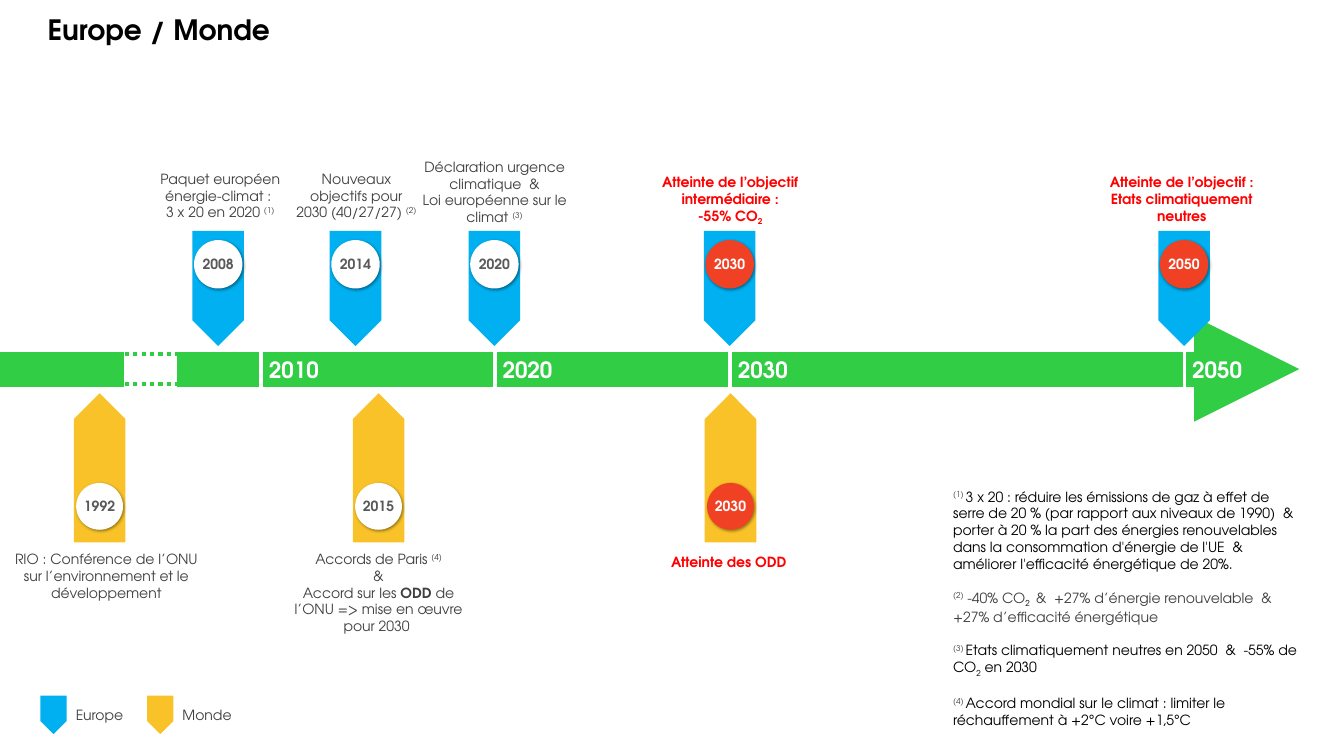
from dataclasses import dataclass
from typing import Any, Optional

from lxml import etree
from pptx import Presentation
from pptx import util as u
from pptx.dml.color import RGBColor
from pptx.enum import dml, shapes, text
from pptx.oxml import ns

FONT = "TeX Gyre Adventor"
COLOURS = {
    "black": "000000", "white": "FFFFFF", "green": "31CD44",
    "europe": "00B0F0", "monde": "F8C228", "target": "F14124",
    "alert": "FF0000", "year": "595959", "label": "404040",
}
LEFT, CENTER = text.PP_ALIGN.LEFT, text.PP_ALIGN.CENTER
SUPER, SUB = 30, -25
AXIS_Y = 9.3


@dataclass(frozen=True)
class Span:
    words: str
    base: int = 0
    bold: Optional[bool] = None
    colour: Optional[str] = None


Paragraphs = list[list[Span]]


@dataclass(frozen=True)
class Style:
    size: float = 10
    colour: str = "label"
    bold: bool = False
    align: Any = LEFT
    before: float = 0
    spacing: float = 1.0


@dataclass(frozen=True)
class Box:
    left: float
    top: float
    width: float
    height: float


@dataclass(frozen=True)
class Region:
    colour: str
    arrow_top: float
    arrow_height: float
    disc_top: float
    disc_size: float
    turn: int


@dataclass(frozen=True)
class Event:
    year: str
    region: Region
    centre: float
    label: Box
    paras: Paragraphs
    target: bool = False


@dataclass(frozen=True)
class Line:
    start: tuple[float, float]
    end: tuple[float, float]
    colour: str
    width: float
    ending: Optional[str] = None
    dash: Any = None


EUROPE = Region("europe", 5.82, 2.9, 6.05, 1.22, 0)
MONDE = Region("monde", 9.91, 3.76, 12.17, 1.18, 180)

EVENTS = [
    Event("2008", EUROPE, 5.5, Box(3.96, 4.29, 3.18, 1.27),
          [[Span("Paquet européen énergie-climat : ")],
           [Span("3 x 20 en 2020 "), Span("(1)", SUPER)]]),
    Event("2014", EUROPE, 8.96, Box(7.39, 4.29, 3.18, 1.27),
          [[Span("Nouveaux objectifs pour 2030 (40/27/27) "), Span("(2)", SUPER)]]),
    Event("2020", EUROPE, 12.46, Box(10.41, 3.99, 4.11, 1.7),
          [[Span("Déclaration urgence climatique  &")],
           [Span("Loi européenne sur le climat "), Span("(3)", SUPER)]]),
    Event("2030", EUROPE, 18.39, Box(16.56, 4.37, 3.68, 1.27),
          [[Span("Atteinte de l’objectif intermédiaire :")],
           [Span("-55% CO"), Span("2", SUB)]], True),
    Event("2050", EUROPE, 29.84, Box(27.94, 4.37, 3.68, 1.27),
          [[Span("Atteinte de l’objectif :")],
           [Span("Etats climatiquement neutres")]], True),
    Event("1992", MONDE, 2.51, Box(0.38, 13.87, 4.6, 1.27),
          [[Span("RIO : Conférence de l’ONU sur l’environnement et le développement")]]),
    Event("2015", MONDE, 9.54, Box(7.24, 13.87, 4.6, 2.13),
          [[Span("Accords de Paris "), Span("(4)", SUPER)],
           [Span("&")],
           [Span("Accord sur les "), Span("ODD", bold=True),
            Span(" de l’ONU => mise en œuvre pour 2030 ")]]),
    Event("2030", MONDE, 18.41, Box(16.56, 13.94, 3.61, 0.43),
          [[Span("Atteinte des ODD")]], True),
]

NOTES = [
    [Span("(1) ", SUPER, colour="label"),
     Span("3 x 20 : réduire les émissions de gaz à effet de serre de 20 % (par rapport aux "
          "niveaux de 1990)  & porter à 20 % la part des énergies renouvelables dans la "
          "consommation d'énergie de l'UE  &  améliorer l'efficacité énergétique de 20%.")],
    [Span("(2)", SUPER, colour="label"), Span(" -40% CO", colour="label"), Span("2 ", SUB),
     Span(" &  +27% d’énergie renouvelable  &  +27% d’efficacité énergétique", colour="label")],
    [Span("(3) ", SUPER, colour="label"),
     Span("Etats climatiquement neutres en 2050  &  -55% de CO"), Span("2", SUB),
     Span(" en 2030")],
    [Span("(4) ", SUPER, colour="label"),
     Span("Accord mondial sur le climat : limiter le réchauffement à +2°C voire +1,5°C")],
]

TICKS = {"2010": 6.58, "2020": 12.47, "2030": 18.4, "2050": 29.85}
AXIS = [
    Line((4.45, AXIS_Y), (32.74, AXIS_Y), "green", 25, "triangle"),
    Line((0, AXIS_Y), (3.12, AXIS_Y), "green", 25),
    *[Line((2.51, AXIS_Y + shift), (4.5, AXIS_Y + shift), "green", 3,
           dash=dml.MSO_LINE.ROUND_DOT) for shift in (-0.38, 0.38)],
    *[Line((x, AXIS_Y - 0.44), (x, AXIS_Y + 0.45), "white", 2.75) for x in TICKS.values()],
]


def rgb(name: str) -> RGBColor:
    return RGBColor.from_string(COLOURS[name])


def apply(thing: Any, formats: dict[str, Any]) -> None:
    for name, value in formats.items():
        setattr(thing, name, value)


def place(box: Box) -> list[u.Length]:
    return [u.Cm(side) for side in (box.left, box.top, box.width, box.height)]


def write(frame: Any, paras: Paragraphs, style: Style, inset: tuple[float, float] = (0, 0)) -> None:
    across, down = (u.Cm(side) for side in inset)
    apply(frame, {"word_wrap": True, "margin_left": across, "margin_right": across,
                  "margin_top": down, "margin_bottom": down})
    for index, spans in enumerate(paras):
        para = frame.add_paragraph() if index else frame.paragraphs[0]
        apply(para, {"alignment": style.align, "line_spacing": style.spacing,
                     "space_before": u.Pt(style.before if index else 0)})
        for item in spans:
            span = para.add_run()
            span.text = item.words
            bold = style.bold if item.bold is None else item.bold
            apply(span.font, {"name": FONT, "size": u.Pt(style.size), "bold": bold})
            span.font.color.rgb = rgb(item.colour or style.colour)
            if item.base:
                span._r.get_or_add_rPr().set("baseline", str(item.base * 1000))


def add_text(page: Any, box: Box, paras: Paragraphs, style: Style,
             inset: tuple[float, float] = (0, 0)) -> None:
    write(page.shapes.add_textbox(*place(box)).text_frame, paras, style, inset)


def add_filled(page: Any, kind: Any, box: Box, colour: str) -> Any:
    shape = page.shapes.add_shape(kind, *place(box))
    shape.shadow.inherit = False
    shape.fill.solid()
    shape.fill.fore_color.rgb = rgb(colour)
    shape.line.fill.background()
    return shape


def add_arrow(page: Any, box: Box, colour: str, turn: int = 0) -> None:
    arrow = add_filled(page, shapes.MSO_SHAPE.DOWN_ARROW, box, colour)
    arrow.adjustments[0], arrow.adjustments[1] = 1, 0.5
    arrow.rotation = turn


def add_disc(page: Any, box: Box, year: str, target: bool) -> None:
    disc = add_filled(page, shapes.MSO_SHAPE.OVAL, box, "target" if target else "white")
    effects = disc._element.spPr.find(ns.qn("a:effectLst"))
    shadow = etree.SubElement(effects, ns.qn("a:outerShdw"), blurRad=str(u.Pt(2)),
                              dist=str(u.Pt(1)), dir="2700000", algn="tl", rotWithShape="0")
    tint = etree.SubElement(shadow, ns.qn("a:srgbClr"), val=COLOURS["black"])
    etree.SubElement(tint, ns.qn("a:alpha"), val="40000")
    disc.text_frame.vertical_anchor = text.MSO_ANCHOR.MIDDLE
    write(disc.text_frame, [[Span(year)]],
          Style(colour="white" if target else "year", bold=True, align=CENTER))


def add_event(page: Any, event: Event) -> None:
    region = event.region
    add_arrow(page, Box(event.centre - 0.65, region.arrow_top, 1.3, region.arrow_height),
              region.colour, region.turn)
    size = region.disc_size
    add_disc(page, Box(event.centre - size / 2, region.disc_top, size, size),
             event.year, event.target)
    add_text(page, event.label, event.paras,
             Style(colour="alert" if event.target else "label", bold=event.target, align=CENTER))


def add_line(page: Any, line: Line) -> None:
    ends = [u.Cm(value) for value in (*line.start, *line.end)]
    connector = page.shapes.add_connector(shapes.MSO_CONNECTOR.STRAIGHT, *ends)
    connector.line.color.rgb = rgb(line.colour)
    apply(connector.line, {"width": u.Pt(line.width), "dash_style": line.dash})
    if line.ending:
        etree.SubElement(connector.line._get_or_add_ln(), ns.qn("a:tailEnd"), type=line.ending)
    etree.SubElement(connector._element.spPr, ns.qn("a:effectLst"))


def main() -> None:
    deck = Presentation()
    apply(deck, {"slide_width": u.Cm(33.87), "slide_height": u.Cm(19.05)})
    page = deck.slides.add_slide(deck.slide_layouts[6])
    add_text(page, Box(1.2, 0.41, 31.5, 1.5), [[Span("Europe / Monde")]],
             Style(20, "black", True, spacing=0.9))
    for line in AXIS:
        add_line(page, line)
    for year, x in TICKS.items():
        add_text(page, Box(x + 0.04, 8.97, 1.57, 0.66), [[Span(year)]],
                 Style(16, "white", True, CENTER))
    for event in EVENTS:
        add_event(page, event)
    for index, (name, region) in enumerate({"Europe": EUROPE, "Monde": MONDE}.items()):
        left = 1.02 + index * 2.69
        add_arrow(page, Box(left, 17.53, 0.66, 0.97), region.colour)
        add_text(page, Box(left + 0.89, 17.81, 1.55, 0.43), [[Span(name)]], Style())
    add_text(page, Box(23.77, 12.17, 9.22, 6.25), NOTES,
             Style(colour="black", before=12), (0.25, 0.13))
    deck.save("out.pptx")


if __name__ == "__main__":
    main()
